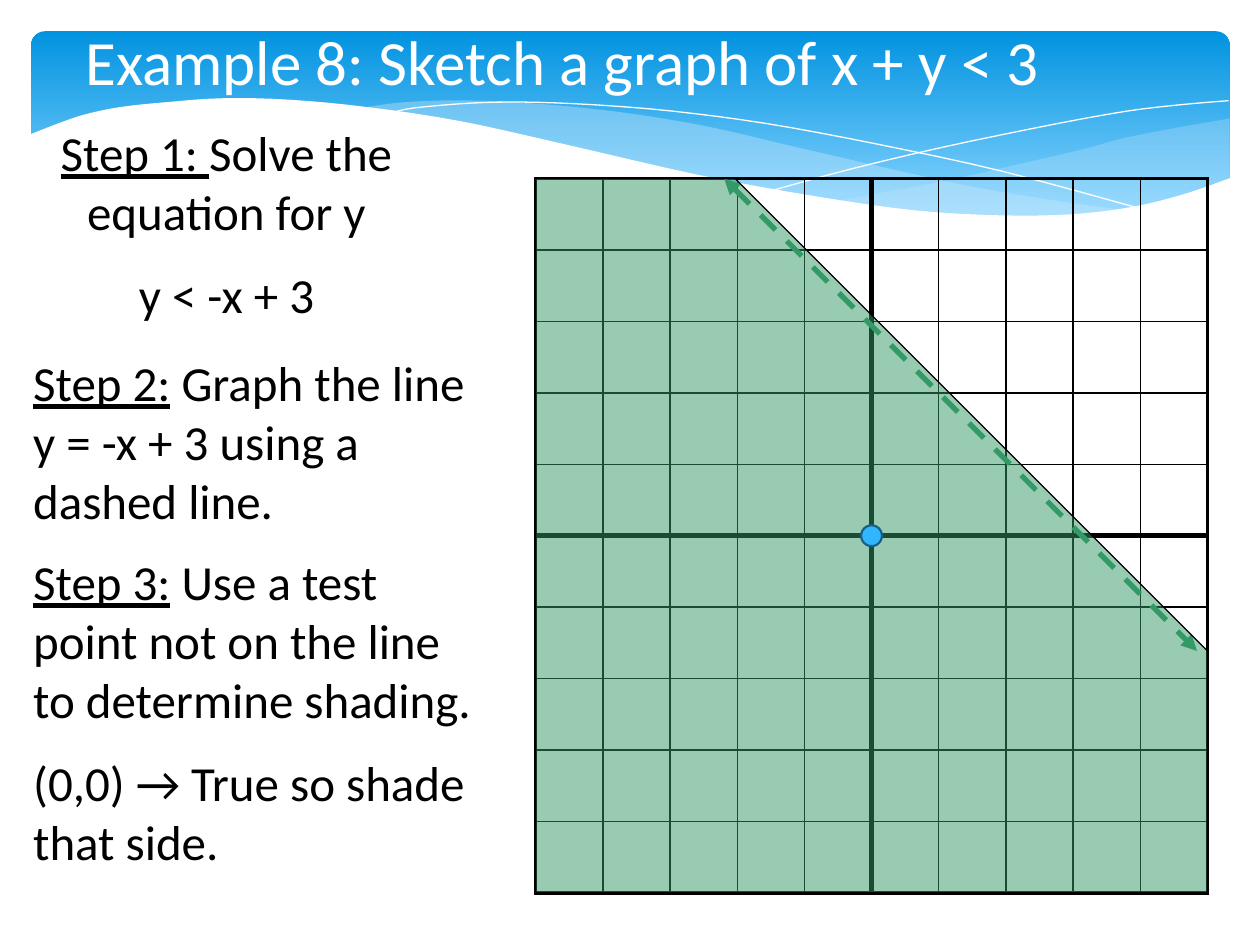
import lxml.etree
import pptx
import pptx.dml.color
import pptx.enum.dml
import pptx.enum.shapes
import pptx.enum.text
import pptx.oxml.ns
import pptx.util

Cm = pptx.util.Cm
Pt = pptx.util.Pt
qn = pptx.oxml.ns.qn

GRID_LEFT, GRID_TOP, GRID_WIDTH, GRID_HEIGHT = 10.8, 3.6, 13.54, 14.4
GRID_RIGHT, GRID_BOTTOM = GRID_LEFT + GRID_WIDTH, GRID_TOP + GRID_HEIGHT
CELLS = 10
LINE_END_Y = 13.12

# Each wave is a list of curves, given as (x, y) in centimetres.
RIGHT_WAVE = [
    [(24.79, 2.39), (23.75, 2.57), (22.63, 2.79), (21.87, 3), (20.45, 3.33),
     (19.13, 3.63), (17.93, 3.86), (16.79, 4.06)],
    [(16.79, 4.06), (17.91, 4.19), (19.23, 4.32), (20.4, 4.37), (21.44, 4.34),
     (22.58, 4.22), (23.57, 4.01), (24.79, 3.58)],
]
MIDDLE_WAVE = [
    [(22.68, 4.24), (21.26, 4.04), (19.69, 3.78), (17.93, 3.4), (15.98, 2.95),
     (14.45, 2.59), (13.06, 2.34), (11.81, 2.18), (10.67, 2.08), (9.65, 2.03),
     (8.74, 2.03), (7.95, 2.08), (7.26, 2.18)],
    [(7.26, 2.18), (8.69, 2.39), (10.26, 2.69), (12.47, 3.2), (14.38, 3.63),
     (16.1, 3.96), (17.65, 4.19), (19, 4.32), (20.22, 4.39), (21.29, 4.37),
     (22.68, 4.24)],
]
FALLING_STRAND = [
    [(7.85, 2.29), (8.33, 2.18), (9.5, 2.08), (10.57, 2.06), (11.91, 2.11),
     (13.54, 2.24), (15.44, 2.49), (17.65, 2.9), (20.19, 3.45), (23.04, 4.22)],
]
RISING_STRAND = [
    [(15.57, 3.84), (17.07, 3.43), (19, 2.97), (21.23, 2.51), (22.73, 2.24),
     (23.83, 2.11), (24.77, 2.03)],
]
WHITE_WAVE = [
    [(24.82, 3.58), (23.88, 3.91), (22.83, 4.17), (21.59, 4.32), (20.14, 4.34),
     (18.44, 4.24), (16.46, 3.96), (14.1, 3.53), (11.35, 2.9), (9.27, 2.44),
     (7.42, 2.16), (5.84, 2.01), (4.5, 1.98), (3.35, 2.06), (2.41, 2.16),
     (1.7, 2.31), (1.17, 2.49), (0.58, 2.72)],
    [(0.58, 5.69), (24.82, 5.69)],
]


def color(value):
    return pptx.dml.color.RGBColor.from_string(value)


def smooth(points, steps=4):
    """Return the points of a Catmull-Rom curve through the given points."""
    padded = [points[0], *points, points[-1]]
    curve = [points[0]]
    for a, b, c, d in zip(padded, padded[1:], padded[2:], padded[3:]):
        for step in range(1, steps + 1):
            t = step / steps
            curve.append(tuple(
                0.5 * (2 * q + (r - p) * t + (2 * p - 5 * q + 4 * r - s) * t ** 2
                       + (3 * q - p - 3 * r + s) * t ** 3)
                for p, q, r, s in zip(a, b, c, d)))
    return curve


def format_shape(shape, fill=None, alpha=None, line=None, line_width=0):
    shape.shadow.inherit = False
    if fill:
        shape.fill.solid()
        shape.fill.fore_color.rgb = color(fill)
    else:
        shape.fill.background()
    if alpha is not None:
        solid = shape._element.spPr.find(qn("a:solidFill"))
        lxml.etree.SubElement(solid[0], qn("a:alpha"), val=str(alpha * 1000))
    if line:
        shape.line.color.rgb = color(line)
        shape.line.width = Pt(line_width)
    else:
        shape.line.fill.background()


def add_outline(slide, points, close=True, **style):
    points = [(Cm(x), Cm(y)) for x, y in points]
    builder = slide.shapes.build_freeform(*points[0])
    builder.add_line_segments(points[1:], close=close)
    format_shape(builder.convert_to_shape(), **style)


def add_wave(slide, curves, **style):
    add_outline(slide, [point for curve in curves for point in smooth(curve)], **style)


def add_banner(slide):
    banner = slide.shapes.add_shape(
        pptx.enum.shapes.MSO_SHAPE.ROUNDED_RECTANGLE,
        Cm(0.63), Cm(0.63), Cm(24.16), Cm(3.96))
    banner.adjustments[0] = 0.07
    format_shape(banner)
    banner.fill.gradient()
    banner.fill.gradient_angle = 270
    stops = banner.fill.gradient_stops
    for stop, position, value in zip(stops, (0, 0.9), ("0293E0", "83D3FE")):
        stop.position = position
        stop.color.rgb = color(value)
    add_wave(slide, RIGHT_WAVE, fill="C6E7FC", alpha=29)
    add_wave(slide, MIDDLE_WAVE, fill="C6E7FC", alpha=40)
    for strand in (FALLING_STRAND, RISING_STRAND):
        add_wave(slide, strand, close=False, line="FFFFFF")
    add_wave(slide, WHITE_WAVE, fill="FFFFFF")


def add_text(slide, box, paragraphs, size=28, value="000000", centered=False):
    """Add a text box; each paragraph is a pair of underlined and plain text."""
    text_box = slide.shapes.add_textbox(*(Cm(length) for length in box))
    frame = text_box.text_frame
    frame.word_wrap = True
    for index, parts in enumerate(paragraphs):
        paragraph = frame.paragraphs[0] if index == 0 else frame.add_paragraph()
        if index:
            paragraph.space_before = Pt(size / 2)
        if centered:
            paragraph.alignment = pptx.enum.text.PP_ALIGN.CENTER
        for text, underline in zip(parts, (True, False)):
            if text:
                run = paragraph.add_run()
                run.text = text
                run.font.name = "Calibri"
                run.font.size = Pt(size)
                run.font.underline = underline
                run.font.color.rgb = color(value)


def set_border(cell, side, width):
    border = lxml.etree.SubElement(
        cell._tc.get_or_add_tcPr(), qn(f"a:ln{side}"), w=str(Pt(width)))
    solid = lxml.etree.SubElement(border, qn("a:solidFill"))
    lxml.etree.SubElement(solid, qn("a:srgbClr"), val="000000")


def grid_line_width(index):
    """Thick in the middle (axis), medium at the edges, thin elsewhere."""
    return {0: 2.25, CELLS // 2: 3, CELLS: 2.25}.get(index, 1)


def add_grid(slide):
    table = slide.shapes.add_table(
        CELLS, CELLS, Cm(GRID_LEFT), Cm(GRID_TOP), Cm(GRID_WIDTH), Cm(GRID_HEIGHT)).table
    table.first_row = table.horz_banding = False
    for row in range(CELLS):
        for column in range(CELLS):
            cell = table.cell(row, column)
            for side, index in (("L", column), ("R", column + 1), ("T", row), ("B", row + 1)):
                set_border(cell, side, grid_line_width(index))
            cell.fill.background()


def add_dashed_arrow(slide, start, end):
    connector = slide.shapes.add_connector(
        pptx.enum.shapes.MSO_CONNECTOR.STRAIGHT,
        *(Cm(length) for length in (*start, *end)))
    connector.line.color.rgb = color("339966")
    connector.line.width = Pt(3)
    connector.line.dash_style = pptx.enum.dml.MSO_LINE.DASH
    properties = connector._element.spPr
    for name in ("a:headEnd", "a:tailEnd"):
        lxml.etree.SubElement(properties.find(qn("a:ln")), qn(name), type="triangle")
    lxml.etree.SubElement(properties, qn("a:effectLst"))


def add_test_point(slide, size=0.42):
    left = GRID_LEFT + (GRID_WIDTH - size) / 2
    top = GRID_TOP + (GRID_HEIGHT - size) / 2
    point = slide.shapes.add_shape(
        pptx.enum.shapes.MSO_SHAPE.OVAL, Cm(left), Cm(top), Cm(size), Cm(size))
    format_shape(point, fill="31B6FD", line="195F84", line_width=1.25)


def main():
    presentation = pptx.Presentation()
    presentation.slide_width, presentation.slide_height = Cm(25.4), Cm(19.05)
    slide = presentation.slides.add_slide(presentation.slide_layouts[6])
    add_banner(slide)
    add_text(slide, (1.47, 0.33, 22.66, 1.78),
             [("", "Example 8: Sketch a graph of x + y < 3")], size=36, value="FFFFFF")
    add_grid(slide)
    add_text(slide, (-0.2, 2.34, 9.53, 4.45),
             [("Step 1: ", "Solve the equation for y"), ("", "y < -x + 3")], centered=True)
    add_text(slide, (0.42, 6.99, 9.53, 3.84),
             [("Step 2:", " Graph the line y = -x + 3 using a dashed line.")])
    add_dashed_arrow(slide, (14.6, GRID_TOP), (24.13, LINE_END_Y))
    add_outline(slide, [(14.82, GRID_TOP), (GRID_RIGHT, LINE_END_Y), (GRID_RIGHT, GRID_BOTTOM),
                        (GRID_LEFT, GRID_BOTTOM), (GRID_LEFT, GRID_TOP)],
                fill="339966", alpha=50, line="000000", line_width=0.75)
    add_text(slide, (0.42, 11, 9.32, 8.03),
             [("Step 3:", " Use a test point not on the line to determine shading."),
              ("", "(0,0) → True so shade that side.")])
    add_test_point(slide)
    presentation.save("out.pptx")


if __name__ == "__main__":
    main()
